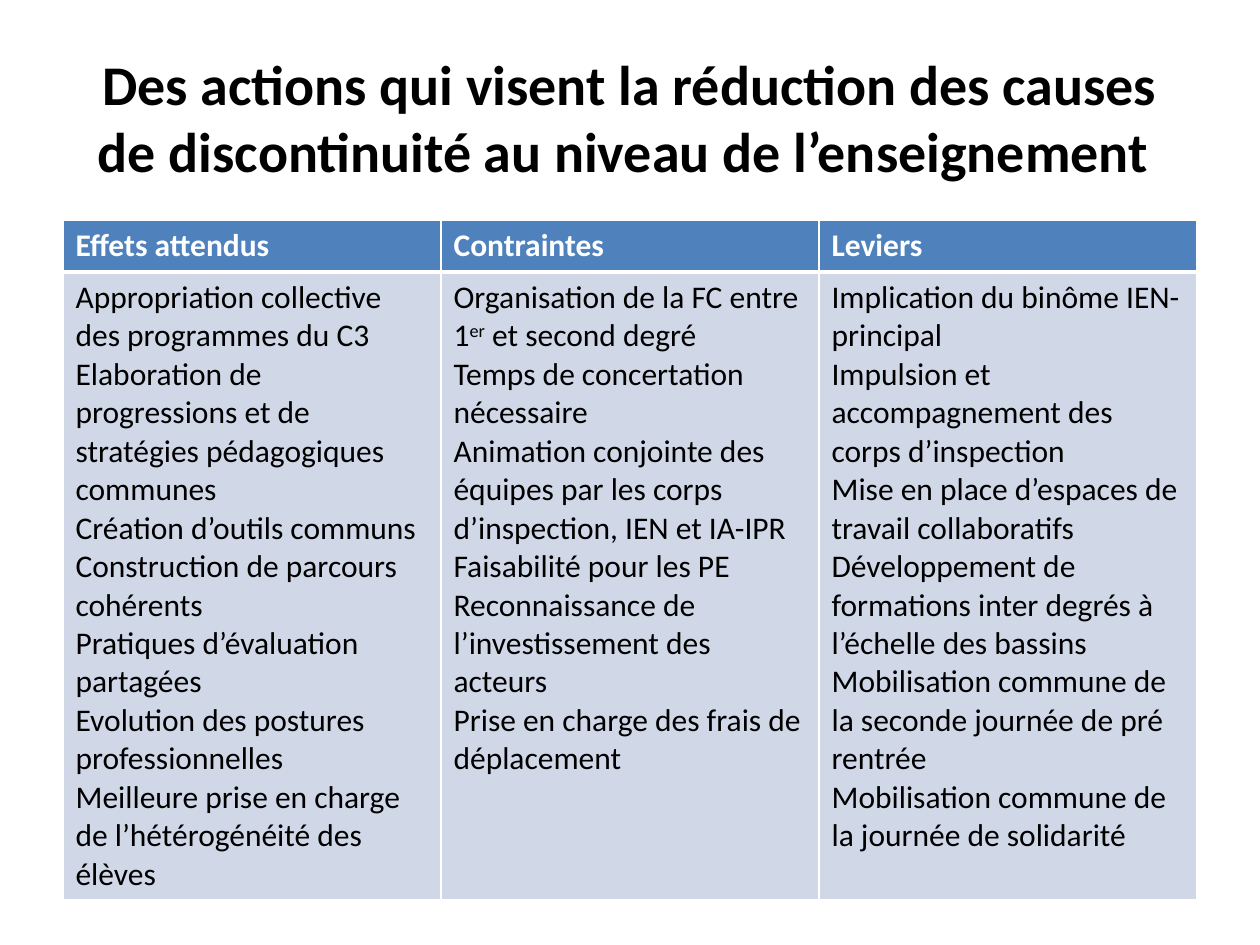
from lxml.etree import SubElement
from pptx import Presentation
from pptx.dml.color import RGBColor
from pptx.enum.text import MSO_ANCHOR, PP_ALIGN
from pptx.oxml.ns import qn
from pptx.util import Inches, Pt

WIDTH, HEIGHT = 10, 7.5
MARGIN = WIDTH * 0.05
CONTENT_WIDTH = WIDTH - 2 * MARGIN
TABLE_TOP = 1.75
HEADER_HEIGHT, BODY_HEIGHT = 0.41, 4.97
TITLE = "Des actions qui visent la réduction des causes de discontinuité au niveau de l’enseignement "
COLUMNS = {
    "Effets attendus": [
        "Appropriation collective des programmes du C3",
        "Elaboration de progressions et de stratégies pédagogiques communes",
        "Création d’outils communs",
        "Construction de parcours cohérents",
        "Pratiques d’évaluation partagées",
        "Evolution des postures professionnelles",
        "Meilleure prise en charge de l’hétérogénéité des élèves",
    ],
    "Contraintes": [
        "Organisation de la FC entre 1^er^ et second degré",
        "Temps de concertation nécessaire",
        "Animation conjointe des équipes par les corps d’inspection, IEN et IA-IPR",
        "Faisabilité pour les PE",
        "Reconnaissance de l’investissement des acteurs",
        "Prise en charge des frais de déplacement",
    ],
    "Leviers": [
        "Implication du binôme IEN-principal",
        "Impulsion et accompagnement des corps d’inspection",
        "Mise en place d’espaces de travail collaboratifs",
        "Développement de formations inter degrés à l’échelle des bassins",
        "Mobilisation commune de la seconde journée de pré rentrée",
        "Mobilisation commune de la journée de solidarité",
    ],
}


def color(value):
    return RGBColor.from_string(value)


def write(frame, lines, size=18, bold=False, ink="000000", align=PP_ALIGN.LEFT):
    for index, line in enumerate(lines):
        para = frame.add_paragraph() if index else frame.paragraphs[0]
        para.alignment = align
        for position, part in enumerate(line.split("^")):
            span = para.add_run()
            span.text = part
            span.font.name = "Calibri"
            span.font.size = Pt(size)
            span.font.bold = bold
            span.font.color.rgb = color(ink)
            if position % 2:
                span.font._element.set("baseline", "30000")


def set_borders(cell, **widths):
    properties = cell._tc.get_or_add_tcPr()
    for side in "LRTB":
        width = Pt(widths.get(side, 1))
        line = SubElement(properties, qn(f"a:ln{side}"), w=str(width))
        fill = SubElement(line, qn("a:solidFill"))
        SubElement(fill, qn("a:srgbClr"), val="FFFFFF")


def fill_cell(cell, lines, fill, borders, **text_format):
    set_borders(cell, **borders)
    cell.fill.solid()
    cell.fill.fore_color.rgb = color(fill)
    write(cell.text_frame, lines, **text_format)


def add_title(page):
    title = page.shapes.title
    title.left, title.top = Inches(MARGIN), Inches(HEIGHT * 0.04)
    title.width, title.height = Inches(CONTENT_WIDTH), Inches(1.25)
    title.text_frame.vertical_anchor = MSO_ANCHOR.MIDDLE
    write(title.text_frame, [TITLE], size=32, bold=True, align=PP_ALIGN.CENTER)


def add_actions_table(page):
    table = page.shapes.add_table(
        2, len(COLUMNS), Inches(MARGIN), Inches(TABLE_TOP),
        Inches(CONTENT_WIDTH), Inches(HEADER_HEIGHT + BODY_HEIGHT),
    ).table
    table.rows[0].height = Inches(HEADER_HEIGHT)
    table.rows[1].height = Inches(BODY_HEIGHT)
    for column, (heading, points) in enumerate(COLUMNS.items()):
        fill_cell(table.cell(0, column), [heading], "4F81BD", {"B": 3}, bold=True, ink="FFFFFF")
        fill_cell(table.cell(1, column), points, "D0D8E8", {"T": 3})


def main():
    deck = Presentation()
    deck.slide_width, deck.slide_height = Inches(WIDTH), Inches(HEIGHT)
    page = deck.slides.add_slide(deck.slide_layouts[5])
    add_title(page)
    add_actions_table(page)
    deck.save("out.pptx")


if __name__ == "__main__":
    main()
